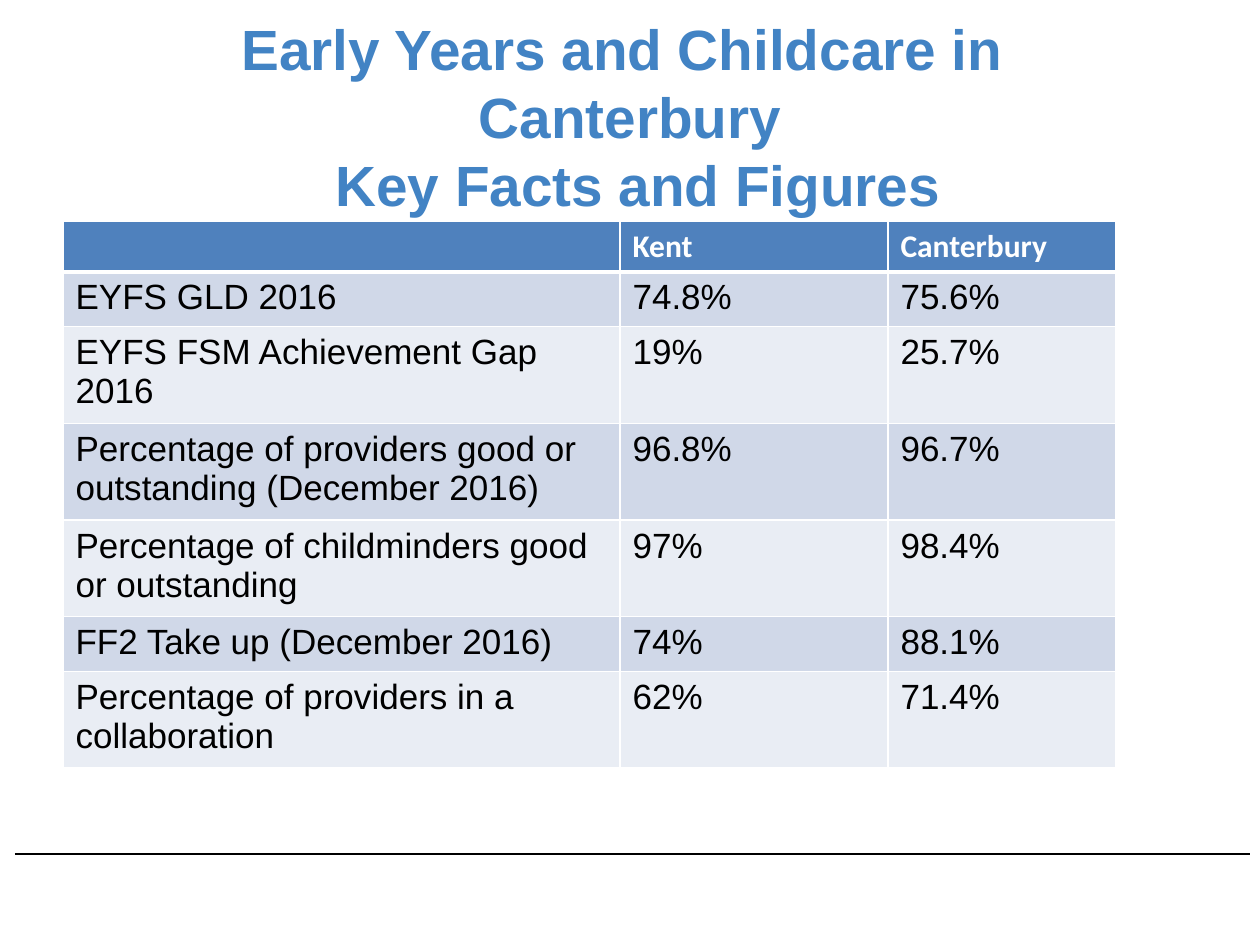
import pptx
import pptx.dml.color
import pptx.enum.shapes
import pptx.enum.text
import pptx.oxml.ns
import pptx.util
from lxml import etree

SCALE = 914400 / 126
WHITE = "FFFFFF"
HEADER_BLUE = "4F81BD"
BAND_COLOURS = ["D0D8E8", "E9EDF4"]
COLUMN_WIDTHS = [557, 268, 228]
ROW_HEIGHT = 51
FIGURES = [
    ["", "Kent", "Canterbury"],
    ["EYFS GLD 2016", "74.8%", "75.6%"],
    ["EYFS FSM Achievement Gap 2016", "19%", "25.7%"],
    ["Percentage of providers good or outstanding (December 2016)", "96.8%", "96.7%"],
    ["Percentage of childminders good or outstanding", "97%", "98.4%"],
    ["FF2 Take up (December 2016)", "74%", "88.1%"],
    ["Percentage of providers in a collaboration", "62%", "71.4%"],
]


def px(length):
    return pptx.util.Emu(round(length * SCALE))


def colour(hex_value):
    return pptx.dml.color.RGBColor.from_string(hex_value)


def write_text(frame, text, size=20, font="Arial", color="000000", bold=False, align=None):
    frame.word_wrap = True
    paragraph = frame.paragraphs[0]
    paragraph.text = text
    paragraph.alignment = align
    for style in [paragraph.font] + [run.font for run in paragraph.runs]:
        style.size = pptx.util.Pt(size)
        style.name = font
        style.bold = bold
        style.color.rgb = colour(color)


def set_borders(cell, widths):
    properties = cell._tc.get_or_add_tcPr()
    for position, (side, width) in enumerate(widths.items()):
        border = etree.Element(pptx.oxml.ns.qn("a:" + side), w=str(pptx.util.Pt(width)))
        fill = etree.SubElement(border, pptx.oxml.ns.qn("a:solidFill"))
        etree.SubElement(fill, pptx.oxml.ns.qn("a:srgbClr"), val=WHITE)
        properties.insert(position, border)


def add_title(slide, left, top, width, height):
    title = slide.shapes.add_textbox(px(left), px(top), px(width), px(height))
    title.text_frame.vertical_anchor = pptx.enum.text.MSO_ANCHOR.MIDDLE
    write_text(
        title.text_frame,
        "Early Years and Childcare in \vCanterbury\v Key Facts and Figures",
        size=32.4, color="4283C4", bold=True,
        align=pptx.enum.text.PP_ALIGN.CENTER,
    )


def add_figures_table(slide, left, top):
    table = slide.shapes.add_table(
        len(FIGURES), len(COLUMN_WIDTHS), px(left), px(top),
        px(sum(COLUMN_WIDTHS)), px(ROW_HEIGHT * len(FIGURES)),
    ).table
    for column, column_width in zip(table.columns, COLUMN_WIDTHS):
        column.width = px(column_width)
    for index, values in enumerate(FIGURES):
        is_header = index == 0
        table.rows[index].height = px(ROW_HEIGHT)
        for cell, value in zip(table.rows[index].cells, values):
            cell.fill.solid()
            cell.fill.fore_color.rgb = colour(HEADER_BLUE if is_header else BAND_COLOURS[(index - 1) % 2])
            set_borders(cell, {
                "lnL": 1, "lnR": 1,
                "lnT": 3 if index == 1 else 1,
                "lnB": 3 if is_header else 1,
            })
            if is_header:
                write_text(cell.text_frame, value, size=18, font="Calibri", color=WHITE, bold=True)
            else:
                write_text(cell.text_frame, value)


def add_footer_rule(slide, left, top, width):
    rule = slide.shapes.add_connector(
        pptx.enum.shapes.MSO_CONNECTOR.STRAIGHT, px(left), px(top), px(left + width), px(top)
    )
    rule.line.color.rgb = colour("000000")
    rule.line.width = pptx.util.Pt(1)
    etree.SubElement(rule._element.spPr, pptx.oxml.ns.qn("a:effectLst"))


def main():
    presentation = pptx.Presentation()
    presentation.slide_width = px(1260)
    presentation.slide_height = px(945)
    slide = presentation.slides.add_slide(presentation.slide_layouts[6])
    add_footer_rule(slide, 15, 854, 1235)
    add_title(slide, 63, 37, 1134, 158)
    add_figures_table(slide, 63, 221)
    presentation.save("out.pptx")


if __name__ == "__main__":
    main()
